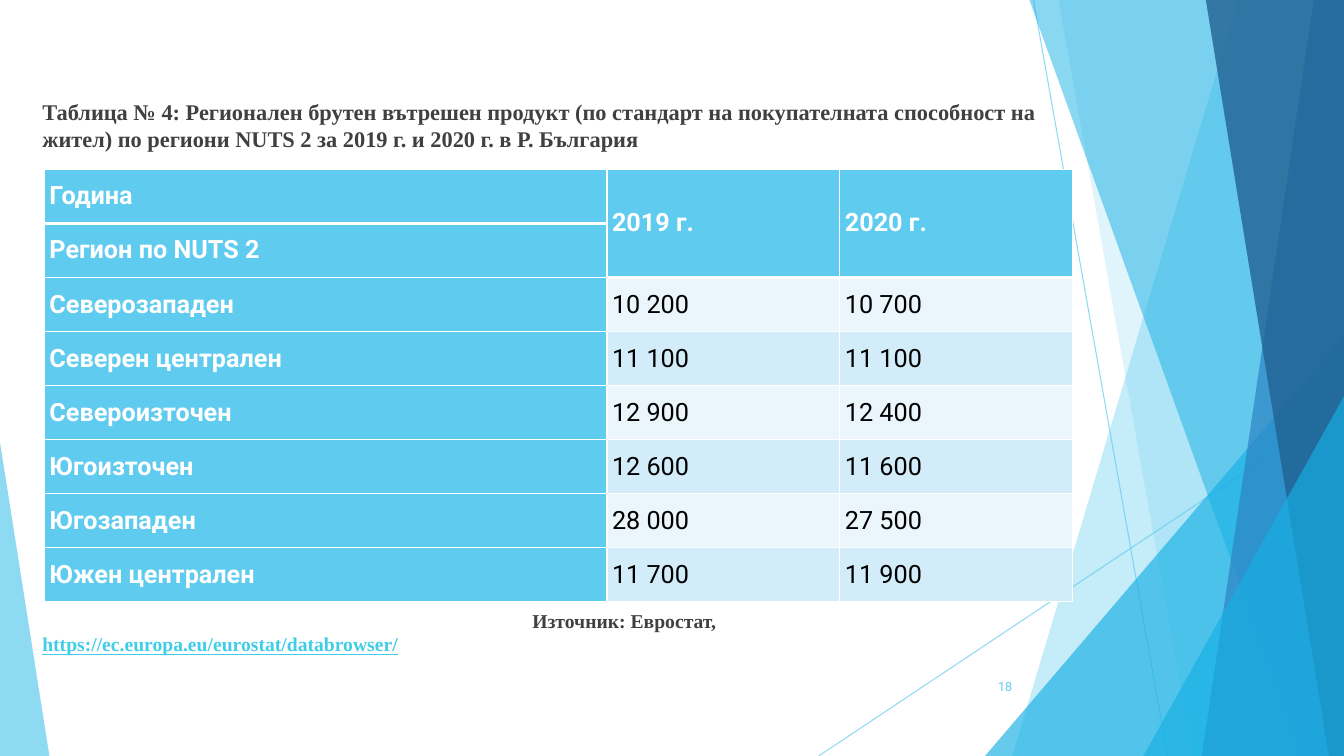
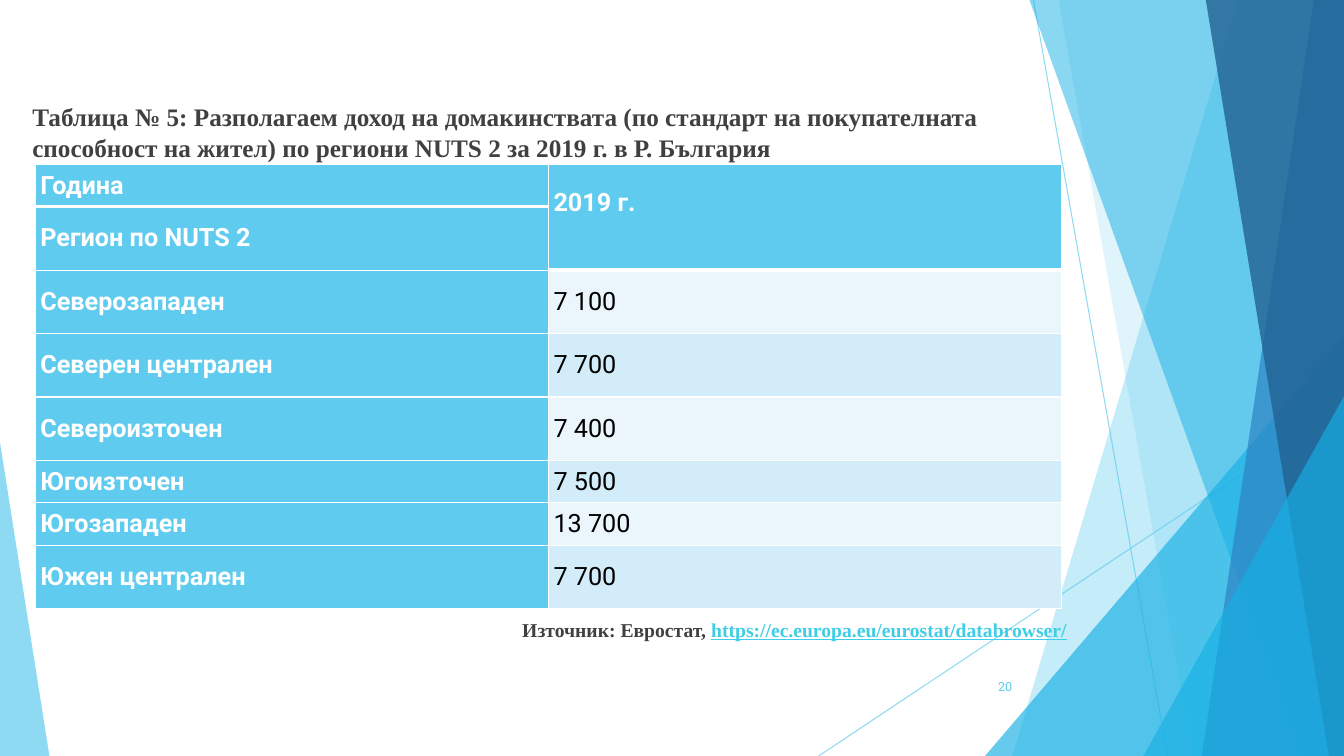
from dataclasses import dataclass

from lxml.etree import SubElement
from pptx import Presentation
from pptx.dml.color import RGBColor as RGB
from pptx.enum.shapes import MSO_CONNECTOR as Link, MSO_SHAPE as Shape
from pptx.enum.text import MSO_ANCHOR as Anchor, MSO_AUTO_SIZE as Fit, PP_ALIGN as Align
from pptx.oxml.ns import qn
from pptx.util import Inches, Pt


@dataclass(frozen=True)
class Theme:
    sky: str = "5FCBEF"
    cyan: str = "17B0E4"
    blue: str = "2E83C3"
    navy: str = "226292"
    link: str = "3FCDE7"
    ink: str = "404040"
    black: str = "000000"
    white: str = "FFFFFF"
    pale: str = "EAF6FC"
    tint: str = "D2ECF9"
    serif: str = "Times New Roman"
    sans: str = "Roboto"
    cell: int = 18
    source: int = 14
    number: int = 9


THEME = Theme()
WIDE, HIGH = 13.33, 7.5
REGIONS = ["Северозападен", "Северен централен", "Североизточен",
           "Югоизточен", "Югозападен", "Южен централен"]


def write(para, text, size=18, color=THEME.ink, font=THEME.serif, bold=False, line=False, align=None):
    run = para.add_run()
    run.text = text
    face = run.font
    face.size, face.name, face.bold, face.underline = Pt(size), font, bold, line
    face.color.rgb = RGB.from_string(color)
    if align is not None:
        para.alignment = align


def fade(fill, color, alpha):
    fill.solid()
    fill.fore_color.rgb = RGB.from_string(color)
    tone = fill._xPr.find(qn("a:solidFill"))[0]
    SubElement(tone, qn("a:alpha")).set("val", str(alpha * 1000))


def edge(cell, side, width):
    line = SubElement(cell._tc.get_or_add_tcPr(), qn("a:ln" + side))
    line.set("w", str(Pt(width)))
    SubElement(SubElement(line, qn("a:solidFill")), qn("a:srgbClr")).set("val", THEME.white)


class Deck:
    def __init__(self):
        self.show = Presentation()
        self.show.slide_width, self.show.slide_height = Inches(WIDE), Inches(HIGH)
        self.base = self.show.slide_layouts[5]
        self.slide = None

    def start(self):
        self.slide = self.show.slides.add_slide(self.base)
        if len(self.show.slides) == 1:
            self.decor()

    def ray(self, *ends):
        line = self.slide.shapes.add_connector(Link.STRAIGHT, *map(Inches, ends))
        line.line.width = Pt(0.75)
        fade(line.line.fill, THEME.sky, 70)
        SubElement(line.element.spPr, qn("a:effectLst"))
        return line

    def paint(self, shape, color, alpha):
        fade(shape.fill, color, alpha)
        shape.line.fill.background()
        shape.shadow.inherit = False
        return shape

    def band(self, top, foot, color, alpha):
        dots = [(top, 0), (WIDE, 0), (WIDE, HIGH), (foot, HIGH)]
        first, *rest = [(Inches(x), Inches(y)) for x, y in dots]
        path = self.slide.shapes.build_freeform(*first)
        path.add_line_segments(rest)
        return self.paint(path.convert_to_shape(), color, alpha)

    def wedge(self, left, top, width, peak, color, alpha):
        box = map(Inches, (left, top, width, HIGH - top))
        shape = self.slide.shapes.add_shape(Shape.ISOSCELES_TRIANGLE, *box)
        shape.adjustments[0] = peak
        return self.paint(shape, color, alpha)

    def decor(self):
        parts = [
            self.ray(10.25, 0, 11.58, HIGH),
            self.ray(WIDE, 4.03, 8.12, HIGH),
            self.band(12.28, 10.04, THEME.sky, 36),
            self.band(10.5, 11.83, THEME.sky, 20),
            self.wedge(9.77, 3.33, 3.56, 1, THEME.cyan, 66),
            self.band(10.21, 12.91, THEME.cyan, 50),
            self.band(13.03, 11.92, THEME.blue, 70),
            self.band(11.96, 13.18, THEME.navy, 80),
            self.wedge(11.34, 3.93, 1.99, 1, THEME.cyan, 66),
            self.wedge(0, 4.39, 0.49, 0, THEME.sky, 70),
        ]
        tree = self.base.shapes._spTree
        for spot, part in enumerate(parts):
            part.element[0][0].set("id", str(50 + spot))
            tree.insert(2 + spot, part.element)

    def place(self, shape, left, top, width, height, anchor=Anchor.TOP):
        shape.left, shape.top, shape.width, shape.height = map(Inches, (left, top, width, height))
        frame = shape.text_frame
        frame.word_wrap, frame.auto_size = True, Fit.NONE
        frame.vertical_anchor = anchor
        frame.margin_left = frame.margin_right = frame.margin_top = frame.margin_bottom = 0
        return frame

    def text(self, *box, **style):
        return self.place(self.slide.shapes.add_textbox(0, 0, 0, 0), *box, **style)

    def title(self, text, left, top, size):
        frame = self.place(self.slide.shapes.title, left, top, 10.3, 0.6)
        write(frame.paragraphs[0], text, size=size, bold=True, align=Align.LEFT)

    def source(self, left, top, split=False):
        frame = self.text(left, top, 10.5, 0.5)
        para = frame.paragraphs[0]
        para._p.get_or_add_pPr().set("indent", str(Inches(4.86)))
        write(para, "Източник: Евростат,", size=THEME.source, bold=True)
        if split:
            para = frame.add_paragraph()
        else:
            write(para, " ", size=THEME.source, bold=True)
        write(para, "https://ec.europa.eu/eurostat/databrowser/",
              size=THEME.source, color=THEME.link, bold=True, line=True)

    def number(self, value):
        frame = self.text(9.39, 6.61, 0.65, 0.4, anchor=Anchor.MIDDLE)
        write(frame.paragraphs[0], str(value), size=THEME.number, color=THEME.sky,
              font=THEME.sans, align=Align.RIGHT)

    def table(self, left, top, cols, rows, data, drop=0):
        box = map(Inches, (left, top, sum(cols), sum(rows)))
        grid = self.slide.shapes.add_table(len(rows), len(cols), *box).table
        for col, width in zip(grid.columns, cols):
            col.width = Inches(width)
        for row, height in zip(grid.rows, rows):
            row.height = Inches(height)
        for r, line in enumerate(data):
            for c, text in enumerate(line):
                self.cell(grid.cell(r, c), r, c, text)
        for c in range(1, len(cols)):
            grid.cell(0, c).merge(grid.cell(1, c))
            grid.cell(0, c).margin_bottom = Inches(drop)

    def cell(self, cell, r, c, text):
        head = r < 2 or c == 0
        thick = r == 0 or (r == 1 and c > 0)
        cell.margin_left = cell.margin_right = Inches(0.05)
        cell.margin_top = cell.margin_bottom = 0
        cell.vertical_anchor = Anchor.MIDDLE
        for side in "LR":
            edge(cell, side, 1)
        if r == 0:
            edge(cell, "T", 1)
        edge(cell, "B", 3 if thick else 1)
        cell.fill.solid()
        shade = THEME.sky if head else (THEME.pale, THEME.tint)[r % 2]
        cell.fill.fore_color.rgb = RGB.from_string(shade)
        if text:
            write(cell.text_frame.paragraphs[0], text, size=THEME.cell, font=THEME.sans,
                  color=THEME.white if head else THEME.black, bold=head)


def fields(years, *values):
    head = [["Година", *years], ["Регион по NUTS 2", *[""] * len(years)]]
    return head + [list(row) for row in zip(REGIONS, *values)]


def main():
    deck = Deck()

    deck.start()
    deck.title("Таблица № 4: Регионален брутен вътрешен продукт (по стандарт на покупателната "
               "способност на жител) по региони NUTS 2 за 2019 г. и 2020 г. в Р. България",
               0.42, 0.97, 16)
    deck.source(0.42, 6.04, split=True)
    deck.number(18)
    deck.table(0.44, 1.68, [5.58, 2.31, 2.31], [4.29 / 8] * 8, fields(
        ["2019 г.", "2020 г."],
        ["10 200", "11 100", "12 900", "12 600", "28 000", "11 700"],
        ["10 700", "11 100", "12 400", "11 600", "27 500", "11 900"]))

    deck.start()
    deck.title("Таблица № 5: Разполагаем доход на домакинствата (по стандарт на покупателната "
               "способност на жител) по региони NUTS 2 за 2019 г. в Р. България",
               0.32, 1.01, 18)
    deck.source(0.32, 6.13)
    deck.number(20)
    low, tall = 0.42, 0.63
    deck.table(0.35, 1.63, [5.09] * 2, [low, *[tall] * 4, low, low, tall], fields(
        ["2019 г."], ["7 100", "7 700", "7 400", "7 500", "13 700", "7 700"]), drop=0.29)

    deck.show.save("out.pptx")


if __name__ == "__main__":
    main()
